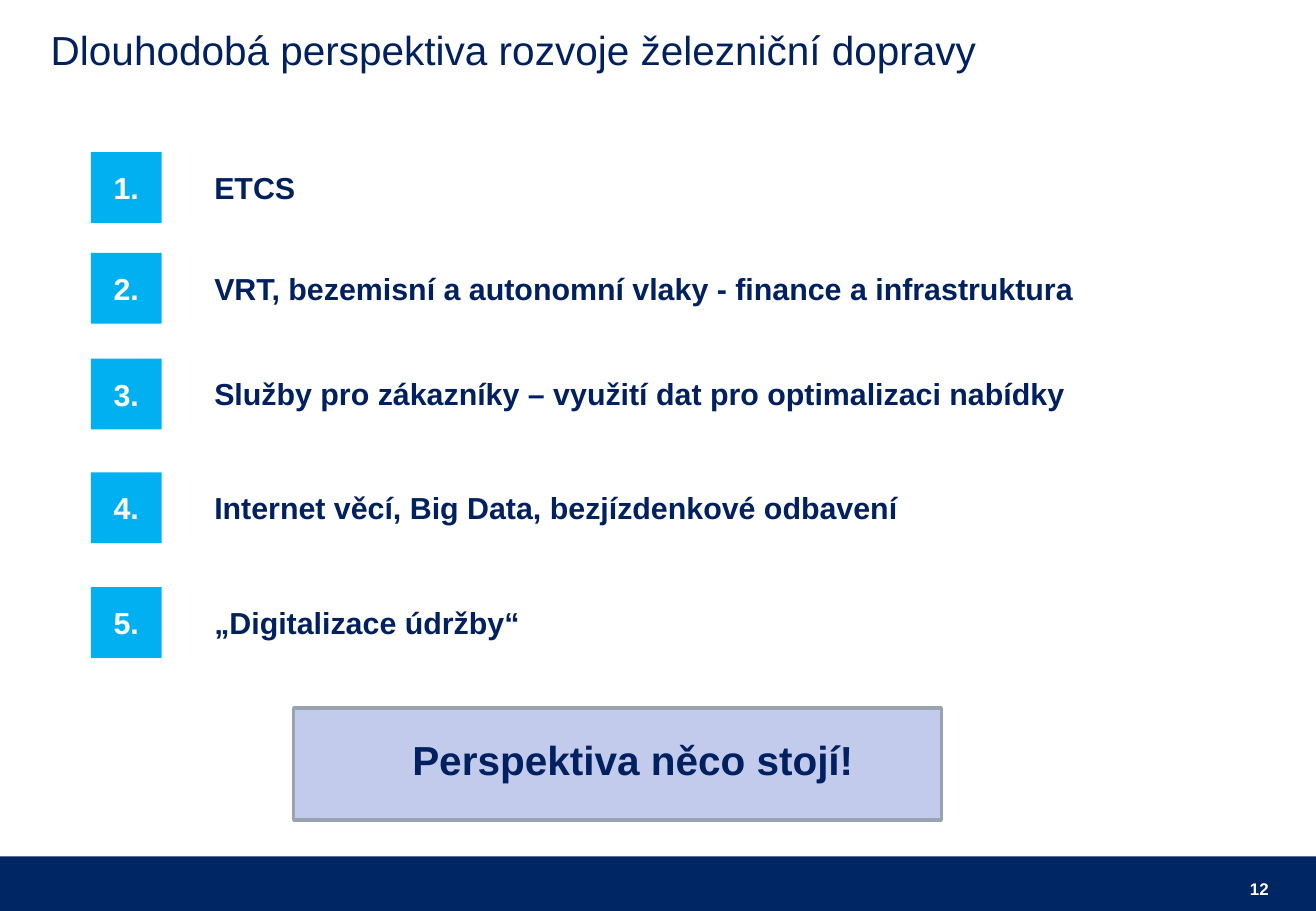
from dataclasses import dataclass

from lxml import etree
from pptx import Presentation
from pptx.dml.color import RGBColor
from pptx.enum.shapes import MSO_SHAPE
from pptx.enum.text import MSO_ANCHOR, MSO_AUTO_SIZE, PP_ALIGN
from pptx.oxml.ns import qn
from pptx.util import Cm, Pt

RECTANGLE = MSO_SHAPE.RECTANGLE
LEFT, CENTER = PP_ALIGN.LEFT, PP_ALIGN.CENTER
TOP, MIDDLE, BOTTOM = MSO_ANCHOR.TOP, MSO_ANCHOR.MIDDLE, MSO_ANCHOR.BOTTOM
NO_AUTOFIT = MSO_AUTO_SIZE.NONE
TITLE_ONLY = 5
PAGE = 12


@dataclass(frozen=True)
class Theme:
    font: str = "Arial"
    navy: RGBColor = RGBColor(0x00, 0x20, 0x60)
    footer: RGBColor = RGBColor(0x00, 0x26, 0x64)
    cyan: RGBColor = RGBColor(0x00, 0xB0, 0xF0)
    lavender: RGBColor = RGBColor(0xC3, 0xCB, 0xEC)
    grey: RGBColor = RGBColor(0x99, 0xA4, 0xB3)
    white: RGBColor = RGBColor(0xFF, 0xFF, 0xFF)
    heading: Pt = Pt(24)
    item: Pt = Pt(18)
    page: Pt = Pt(10)


THEME = Theme()

# Topics with the top of each row, in cm below the list's top
TOPICS = [
    (0, "ETCS"),
    (2.11, "VRT, bezemisní a autonomní vlaky - finance a infrastruktura"),
    (4.32, "Služby pro zákazníky – využití dat pro optimalizaci nabídky"),
    (6.7, "Internet věcí, Big Data, bezjízdenkové odbavení"),
    (9.1, "„Digitalizace údržby“"),
]


def style(paragraph, size, color, bold=True, align=LEFT):
    paragraph.alignment = align
    font = paragraph.font
    font.name, font.size, font.bold = THEME.font, size, bold
    font.color.rgb = color


def add_rectangle(slide, left, top, width, height, fill):
    rectangle = slide.shapes.add_shape(RECTANGLE, left, top, width, height)
    rectangle.shadow.inherit = False
    rectangle.fill.solid()
    rectangle.fill.fore_color.rgb = fill
    rectangle.line.fill.background()
    return rectangle


def add_text(slide, left, top, width, height, text, size, align=LEFT):
    frame = slide.shapes.add_textbox(left, top, width, height).text_frame
    frame.word_wrap = True
    frame.text = text
    style(frame.paragraphs[0], size, THEME.navy, align=align)


def clear_margins(frame):
    frame.margin_left = frame.margin_right = 0
    frame.margin_top = frame.margin_bottom = 0


def add_footer(slide, left, top, width, height):
    add_rectangle(slide, left, top, width, height, THEME.footer)
    page_number = slide.shapes.add_textbox(
        left + width - Cm(1.4), top + Cm(0.46), Cm(0.43), Cm(0.43))
    frame = page_number.text_frame
    clear_margins(frame)
    frame.word_wrap = False
    paragraph = frame.paragraphs[0]
    style(paragraph, THEME.page, THEME.white, align=CENTER)
    # Live slide number field
    field = etree.SubElement(
        paragraph._p, qn("a:fld"),
        id="{B6F15528-21DE-4FAA-801E-634DDDAF4B2B}", type="slidenum")
    etree.SubElement(field, qn("a:rPr"), lang="cs-CZ")
    etree.SubElement(field, qn("a:t")).text = str(PAGE)


def add_title(slide, left, top, width, height, text):
    title = slide.shapes.title
    title.left, title.top, title.width, title.height = left, top, width, height
    frame = title.text_frame
    frame.text = text
    clear_margins(frame)
    frame.auto_size = NO_AUTOFIT
    frame.vertical_anchor = BOTTOM
    style(frame.paragraphs[0], THEME.heading, THEME.navy, bold=False)


def add_topics(slide, left, top, width, topics):
    side, label_indent, label_height = Cm(1.48), Cm(2.33), Cm(1.02)
    for number, (offset, topic) in enumerate(topics, start=1):
        row_top = top + Cm(offset)
        badge = add_rectangle(slide, left, row_top, side, side, THEME.cyan)
        frame = badge.text_frame
        frame.text = f"{number}."
        frame.vertical_anchor = MIDDLE
        style(frame.paragraphs[0], THEME.item, THEME.white, align=CENTER)
        add_text(slide, left + label_indent,
                 row_top + (side - label_height) // 2,
                 width - label_indent, label_height, topic, THEME.item)


def add_callout(slide, left, top, width, height, text):
    panel = add_rectangle(slide, left, top, width, height, THEME.lavender)
    panel.line.color.rgb = THEME.grey
    panel.line.width = Pt(2)
    add_text(slide, left + Cm(1.27), top + Cm(0.43), width - Cm(1.9), Cm(1.27),
             text, THEME.heading, CENTER)


def main():
    prs = Presentation()
    prs.slide_width, prs.slide_height = Cm(27.51), Cm(19.05)
    prs.element.set("firstSlideNum", str(PAGE))
    slide = prs.slides.add_slide(prs.slide_layouts[TITLE_ONLY])

    add_footer(slide, 0, Cm(17.91), prs.slide_width, Cm(1.14))
    add_title(slide, Cm(1.06), Cm(0.36), Cm(22.86), Cm(1.19),
              "Dlouhodobá perspektiva rozvoje železniční dopravy")
    add_topics(slide, Cm(1.9), Cm(3.18), Cm(21.38), TOPICS)
    add_callout(slide, Cm(6.14), Cm(14.81), Cm(13.54), Cm(2.34),
                "Perspektiva něco stojí!")
    prs.save("out.pptx")


if __name__ == "__main__":
    main()
